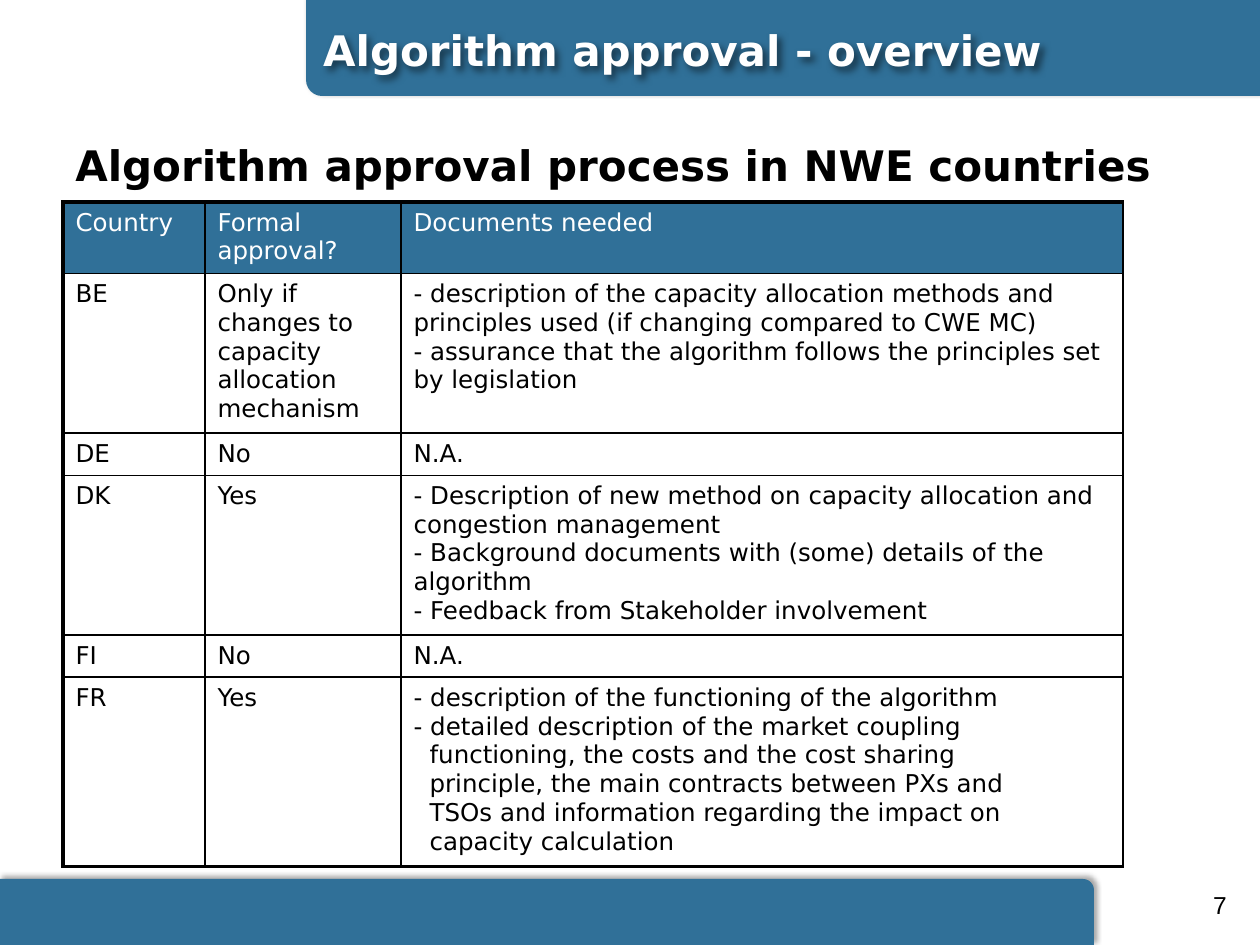
import pptx
import pptx.util
import pptx.dml.color
import pptx.enum.shapes
import pptx.enum.text
import pptx.oxml
import pptx.oxml.ns

SCALE = 914400 / 126
HUES = {"blue": "307098", "black": "000000", "white": "FFFFFF"}
FACE = "DejaVu Sans"
SHAPE = pptx.enum.shapes.MSO_SHAPE
ALIGN = pptx.enum.text.PP_ALIGN
ANCHOR = pptx.enum.text.MSO_ANCHOR
HANG = 16
COLS = [142, 196, 722]
ROWS = [
    (70, "Country", "Formal approval?", ["Documents needed"]),
    (157, "BE", "Only if changes to capacity allocation mechanism", [
        "- description of the capacity allocation methods and principles used "
        "(if changing compared to CWE MC)",
        "- assurance that the algorithm follows the principles set by legislation"]),
    (41, "DE", "No", ["N.A."]),
    (157, "DK", "Yes", [
        "- Description of new method on capacity allocation and congestion management",
        "- Background documents with (some) details of the algorithm",
        "- Feedback from Stakeholder involvement"]),
    (41, "FI", "No", ["N.A."]),
    (185, "FR", "Yes", [
        "- description of the functioning of the algorithm",
        "- detailed description of the market coupling\v"
        "functioning, the costs and the cost sharing\v"
        "principle, the main contracts between PXs and\v"
        "TSOs and information regarding the impact on\v"
        "capacity calculation"]),
]


def px(n):
    return pptx.util.Emu(round(n * SCALE))


def place(box):
    return [px(n) for n in box]


def tint(hue):
    return pptx.dml.color.RGBColor.from_string(HUES[hue])


def style(para, hue, **form):
    values = {"name": FACE, "size": pptx.util.Pt(14), "bold": False, **form}
    for run in para.runs:
        for key, value in values.items():
            setattr(run.font, key, value)
        run.font.color.rgb = tint(hue)


def write(frame, lines, hue, **form):
    for i, line in enumerate(lines):
        para = frame.add_paragraph() if i else frame.paragraphs[0]
        para.text = line
        style(para, hue, **form)
        if "\v" in line:
            props = para._p.get_or_add_pPr()
            props.set("marL", str(px(HANG)))
            props.set("indent", str(-px(HANG)))


def shade(shape, blur, dist, angle, alpha):
    """Give the shape, or its text if it has no fill, a soft outer shadow."""
    shape.shadow.inherit = False
    glow = shape._element.spPr.find(pptx.oxml.ns.qn("a:effectLst"))
    glow.append(pptx.oxml.parse_xml(
        f'<a:outerShdw {pptx.oxml.ns.nsdecls("a")} blurRad="{round(blur * 12700)}" '
        f'dist="{round(dist * 12700)}" dir="{angle * 60000}" algn="tl" rotWithShape="0">'
        f'<a:srgbClr val="{HUES["black"]}"><a:alpha val="{alpha * 1000}"/></a:srgbClr>'
        '</a:outerShdw>'))


def add_bar(slide, box, turn=0):
    bar = slide.shapes.add_shape(SHAPE.ROUND_1_RECTANGLE, *place(box))
    bar.rotation = turn
    bar.fill.solid()
    bar.fill.fore_color.rgb = tint("blue")
    bar.line.fill.background()
    shade(bar, 3.1, 1.8, 306, 35)


def add_banner(slide, box):
    add_bar(slide, box, 180)
    left, top, width, height = box
    label = slide.shapes.add_shape(
        SHAPE.ROUNDED_RECTANGLE, *place((left, top, width + 4, height + 4)))
    label.fill.background()
    label.line.fill.background()
    shade(label, 4, 3, 45, 50)
    frame = label.text_frame
    frame.vertical_anchor = ANCHOR.MIDDLE
    write(frame, ["Algorithm approval - overview"], "white",
          size=pptx.util.Pt(24), bold=True)
    frame.paragraphs[0].alignment = ALIGN.LEFT


def add_label(slide, box, text, anchor, **form):
    frame = slide.shapes.add_textbox(*place(box)).text_frame
    frame.word_wrap = True
    frame.vertical_anchor = anchor
    write(frame, [text], "black", **form)
    return frame.paragraphs[0]


def edge(cell, sides):
    """Draw the borders of a cell; sides maps L, R, T and B to points."""
    props = cell._tc.get_or_add_tcPr()
    for side, width in sides.items():
        props.append(pptx.oxml.parse_xml(
            f'<a:ln{side} {pptx.oxml.ns.nsdecls("a")} w="{round(width * 12700)}">'
            f'<a:solidFill><a:srgbClr val="{HUES["black"]}"/></a:solidFill></a:ln{side}>'))


def add_grid(slide, left, top):
    high = sum(row[0] for row in ROWS)
    table = slide.shapes.add_table(
        len(ROWS), len(COLS), *place((left, top, sum(COLS), high))).table
    table.first_row = table.horz_banding = False
    for col, wide in zip(table.columns, COLS):
        col.width = px(wide)
    last = len(ROWS) - 1
    for r, (tall, land, formal, docs) in enumerate(ROWS):
        table.rows[r].height = px(tall)
        for c, lines in enumerate(([land], [formal], docs)):
            cell = table.cell(r, c)
            edge(cell, {"L": 1 if c else 2.25, "R": 1,
                        "T": 1 if r else 2.25, "B": 2.25 if r == last else 1})
            if r:
                cell.fill.background()
            else:
                cell.fill.solid()
                cell.fill.fore_color.rgb = tint("blue")
            write(cell.text_frame, lines, "black" if r else "white")


def main():
    deck = pptx.Presentation()
    deck.slide_width, deck.slide_height = px(1260), px(945)
    slide = deck.slides.add_slide(deck.slide_layouts[6])
    add_bar(slide, (0, 879, 1094, 66))
    add_banner(slide, (306, 0, 954, 96))
    page = add_label(slide, (945, 880, 294, 50), "7", ANCHOR.MIDDLE, name="Arial")
    page.alignment = ALIGN.RIGHT
    head = add_label(slide, (63, 139, 1134, 96),
                     "Algorithm approval process in NWE countries", ANCHOR.TOP,
                     size=pptx.util.Pt(24), bold=True)
    head.line_spacing = 0.9
    add_grid(slide, 63, 202)
    deck.save("out.pptx")


if __name__ == "__main__":
    main()
